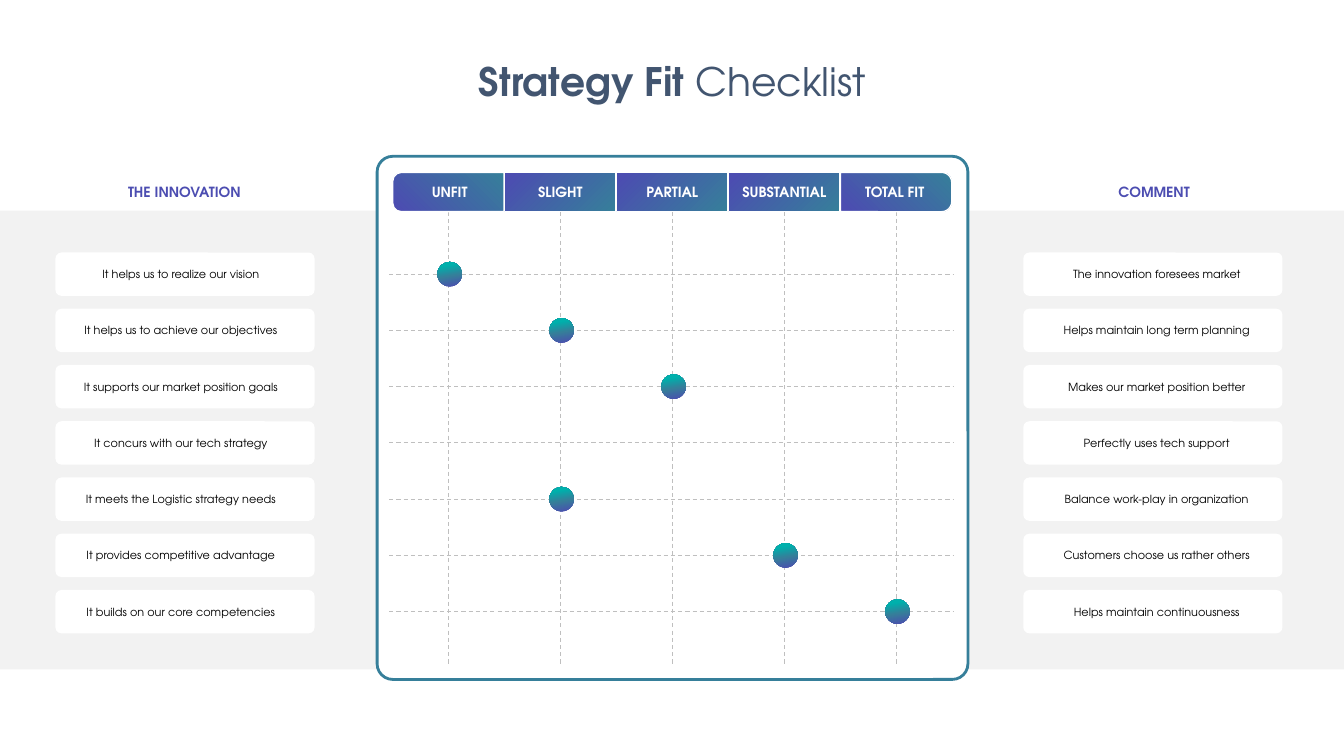
import copy
from dataclasses import dataclass
from typing import Optional

import lxml.etree
import pptx
import pptx.dml.color
import pptx.enum.dml
import pptx.enum.shapes
import pptx.enum.text
import pptx.oxml.ns
import pptx.shapes.autoshape
import pptx.slide
import pptx.text.text
import pptx.util

SLIDE_WIDTH = pptx.util.Inches(13.33)
SLIDE_HEIGHT = pptx.util.Inches(7.5)
FONT = "TeX Gyre Adventor"
COLOURS = {
    "white": "FFFFFF",
    "black": "000000",
    "band": "F2F2F2",
    "grid": "BFBFBF",
    "title": "425570",
    "violet": "4C4DB1",
    "petrol": "367F9A",
    "teal": "00B0AC",
}
HEADER_STOPS = [(0.05, "violet"), (1, "petrol")]
DOT_STOPS = [(0, "violet"), (0.44, "petrol"), (0.81, "teal")]

FIRST_COLUMN, COLUMN_STEP = 33.36, 8.33
FIRST_ROW, ROW_STEP = 36.27, 7.44
HEADER_MIDDLE = 25.4
CARD_WIDTH, CARD_HEIGHT = 19.28, 5.73
DOT_WIDTH, DOT_HEIGHT = 1.82, 3.24

SHAPES = pptx.enum.shapes.MSO_SHAPE
MIDDLE = pptx.enum.text.MSO_ANCHOR.MIDDLE


@dataclass(frozen=True)
class Box:
    """Position and size in percent of the slide's width and height."""
    left: float
    top: float
    width: float
    height: float

    def emu(self) -> tuple[int, int, int, int]:
        return across(self.left), down(self.top), across(self.width), down(self.height)


@dataclass(frozen=True)
class Criterion:
    innovation: str
    fit: Optional[str]
    comment: str


@dataclass(frozen=True)
class Level:
    label: str
    corners: Optional[tuple[float, float]] = None


@dataclass(frozen=True)
class Heading:
    label: str
    box: Box


LEVELS = [
    Level("UNFIT", (0.22, 0)),
    Level("SLIGHT"),
    Level("PARTIAL"),
    Level("SUBSTANTIAL"),
    Level("TOTAL FIT", (0, 0.26)),
]
CRITERIA = [
    Criterion("It helps us to realize our vision", "UNFIT", "The innovation foresees market"),
    Criterion("It helps us to achieve our objectives", "SLIGHT", "Helps maintain long term planning"),
    Criterion("It supports our market position goals", "PARTIAL", "Makes our market position better"),
    Criterion("It concurs with our tech strategy", None, "Perfectly uses tech support"),
    Criterion("It meets the Logistic strategy needs", "SLIGHT", "Balance work-play in organization"),
    Criterion("It provides competitive advantage", "SUBSTANTIAL", "Customers choose us rather others"),
    Criterion("It builds on our core competencies", "TOTAL FIT", "Helps maintain continuousness"),
]
HEADINGS = [
    Heading("THE INNOVATION", Box(9, 23.47, 9.45, 3.73)),
    Heading("COMMENT", Box(82.75, 23.47, 6.23, 3.73)),
]


def across(share: float) -> int:
    return round(SLIDE_WIDTH * share / 100)


def down(share: float) -> int:
    return round(SLIDE_HEIGHT * share / 100)


def column(index: int) -> float:
    return FIRST_COLUMN + index * COLUMN_STEP


def row(index: int) -> float:
    return FIRST_ROW + index * ROW_STEP


def rgb(name: str) -> pptx.dml.color.RGBColor:
    return pptx.dml.color.RGBColor.from_string(COLOURS[name])


def style_run(run: pptx.text.text._Run, size: float, colour: str, bold: bool) -> None:
    run.font.name = FONT
    run.font.size = pptx.util.Pt(size)
    run.font.bold = bold
    run.font.color.rgb = rgb(colour)


def write(frame: pptx.text.text.TextFrame, text: str, size: float, colour: str,
          bold: bool = False, wrap: bool = True,
          side_margins: tuple[float, float] = (0, 0)) -> None:
    frame.text = text
    frame.word_wrap = wrap
    frame.auto_size = pptx.enum.text.MSO_AUTO_SIZE.NONE
    frame.vertical_anchor = MIDDLE
    frame.margin_left, frame.margin_right = map(pptx.util.Inches, side_margins)
    frame.margin_top = frame.margin_bottom = 0
    paragraph = frame.paragraphs[0]
    paragraph.alignment = pptx.enum.text.PP_ALIGN.CENTER
    style_run(paragraph.runs[0], size, colour, bold)


def draw_shape(slide: pptx.slide.Slide, kind: SHAPES, box: Box, fill: Optional[str] = None,
               outline: Optional[str] = None, outline_width: float = 1,
               corners: tuple[float, ...] = ()) -> pptx.shapes.autoshape.Shape:
    shape = slide.shapes.add_shape(kind, *box.emu())
    shape.shadow.inherit = False
    for index, corner in enumerate(corners):
        shape.adjustments[index] = corner
    if fill:
        shape.fill.solid()
        shape.fill.fore_color.rgb = rgb(fill)
    if outline:
        shape.line.color.rgb = rgb(outline)
        shape.line.width = pptx.util.Pt(outline_width)
    else:
        shape.line.fill.background()
    return shape


def fill_gradient(shape: pptx.shapes.autoshape.Shape, stops: list[tuple[float, str]],
                  clockwise_angle: float) -> None:
    shape.fill.gradient()
    shape.fill.gradient_angle = 360 - clockwise_angle
    stop_list = shape.element.spPr.find(".//" + pptx.oxml.ns.qn("a:gsLst"))
    while len(stop_list) < len(stops):
        stop_list.append(copy.deepcopy(stop_list[0]))
    for stop, (position, colour) in zip(shape.fill.gradient_stops, stops):
        stop.position = position
        stop.color.rgb = rgb(colour)


def draw_title(slide: pptx.slide.Slide) -> None:
    title = slide.shapes.title
    title.left, title.top, title.width, title.height = Box(35.26, 7.6, 29.56, 6.27).emu()
    write(title.text_frame, "Strategy Fit ", 28, "title", bold=True, wrap=False)
    ending = title.text_frame.paragraphs[0].add_run()
    ending.text = "Checklist"
    style_run(ending, 28, "title", False)


def draw_heading(slide: pptx.slide.Slide, heading: Heading) -> None:
    label = slide.shapes.add_textbox(*heading.box.emu())
    write(label.text_frame, heading.label, 10, "violet", bold=True, wrap=False,
          side_margins=(0.06, 0.06))


def draw_card(slide: pptx.slide.Slide, text: str, left: float, middle: float,
              side_margins: tuple[float, float]) -> None:
    box = Box(left, middle - CARD_HEIGHT / 2, CARD_WIDTH, CARD_HEIGHT)
    card = draw_shape(slide, SHAPES.ROUNDED_RECTANGLE, box, "white", corners=(0.14,))
    write(card.text_frame, text, 8, "black", side_margins=side_margins)


def draw_grid_line(slide: pptx.slide.Slide, x1: float, y1: float, x2: float, y2: float) -> None:
    grid_line = slide.shapes.add_connector(
        pptx.enum.shapes.MSO_CONNECTOR.STRAIGHT, across(x1), down(y1), across(x2), down(y2))
    grid_line.line.color.rgb = rgb("grid")
    grid_line.line.width = pptx.util.Pt(0.75)
    grid_line.line.dash_style = pptx.enum.dml.MSO_LINE.DASH
    lxml.etree.SubElement(grid_line.element.spPr, pptx.oxml.ns.qn("a:effectLst"))


def draw_dot(slide: pptx.slide.Slide, x: float, y: float) -> None:
    box = Box(x - DOT_WIDTH / 2 + 0.1, y - DOT_HEIGHT / 2, DOT_WIDTH, DOT_HEIGHT)
    fill_gradient(draw_shape(slide, SHAPES.OVAL, box), DOT_STOPS, 260)


def draw_level(slide: pptx.slide.Slide, level: Level, x: float) -> None:
    width, height = 8.28, 5.2
    box = Box(x - width / 2, HEADER_MIDDLE - height / 2, width, height)
    kind = SHAPES.ROUND_2_SAME_RECTANGLE if level.corners else SHAPES.RECTANGLE
    header = draw_shape(slide, kind, box, outline="white", corners=level.corners or ())
    fill_gradient(header, HEADER_STOPS, 45)
    write(header.text_frame, level.label, 10, "white", bold=True)
    if level.corners:
        inset = (header.width - header.height) // 2
        header.left, header.top = header.left + inset, header.top - inset
        header.width, header.height = header.height, header.width
        header.rotation = 270
        header.element.txBody.bodyPr.set("vert", "vert")


def main() -> None:
    deck = pptx.Presentation()
    deck.slide_width, deck.slide_height = SLIDE_WIDTH, SLIDE_HEIGHT
    slide = deck.slides.add_slide(deck.slide_layouts.get_by_name("Title Only"))
    draw_title(slide)
    draw_shape(slide, SHAPES.RECTANGLE, Box(0, 27.87, 100, 60.67), "band")
    draw_shape(slide, SHAPES.ROUNDED_RECTANGLE, Box(28.06, 20.67, 43.96, 69.2), "white",
               "petrol", 2, (0.03,))
    for heading in HEADINGS:
        draw_heading(slide, heading)
    for index, criterion in enumerate(CRITERIA):
        draw_card(slide, criterion.innovation, 4.13, row(index), (0.08, 0.16))
        draw_card(slide, criterion.comment, 76.14, row(index), (0.16, 0.08))
        draw_grid_line(slide, 28.96, row(index), 70.97, row(index))
    for index, level in enumerate(LEVELS):
        draw_grid_line(slide, column(index), 28, column(index), 88)
        draw_level(slide, level, column(index))
    labels = [level.label for level in LEVELS]
    for index, criterion in enumerate(CRITERIA):
        if criterion.fit:
            draw_dot(slide, column(labels.index(criterion.fit)), row(index))
    deck.save("out.pptx")


if __name__ == "__main__":
    main()
